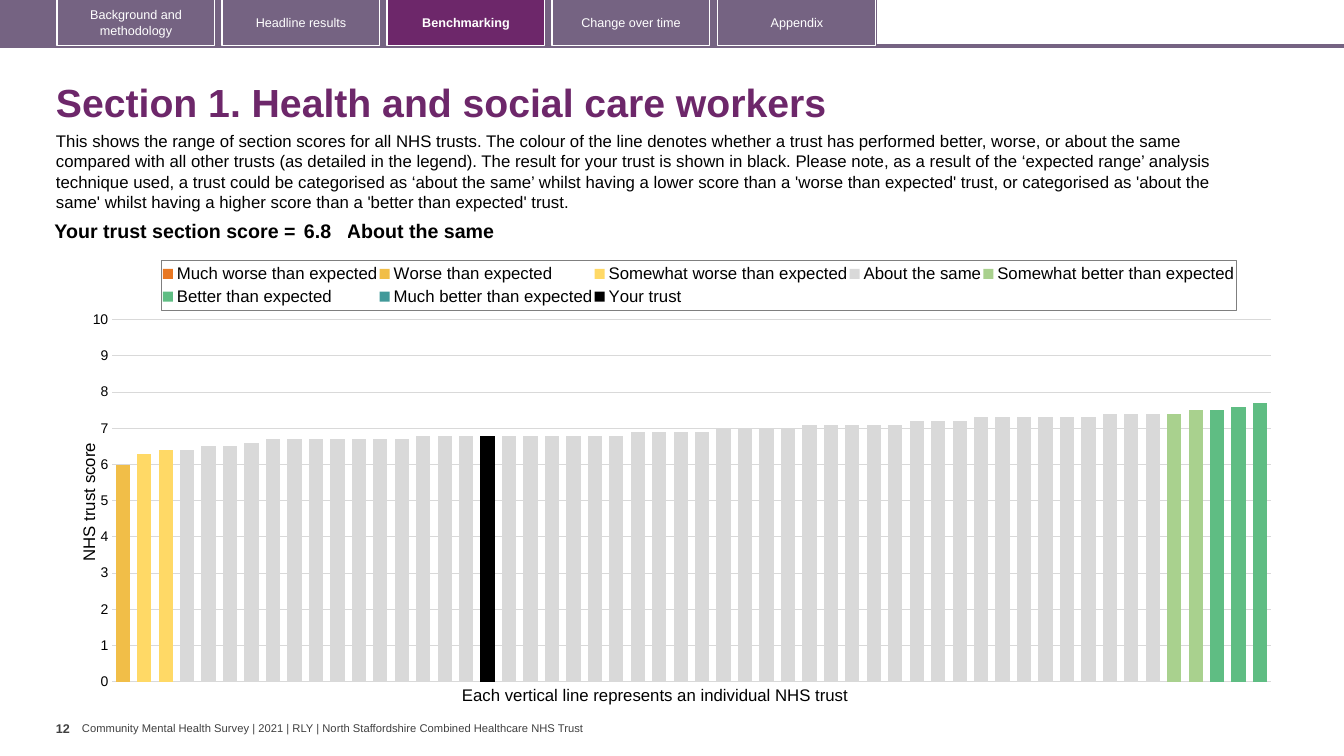
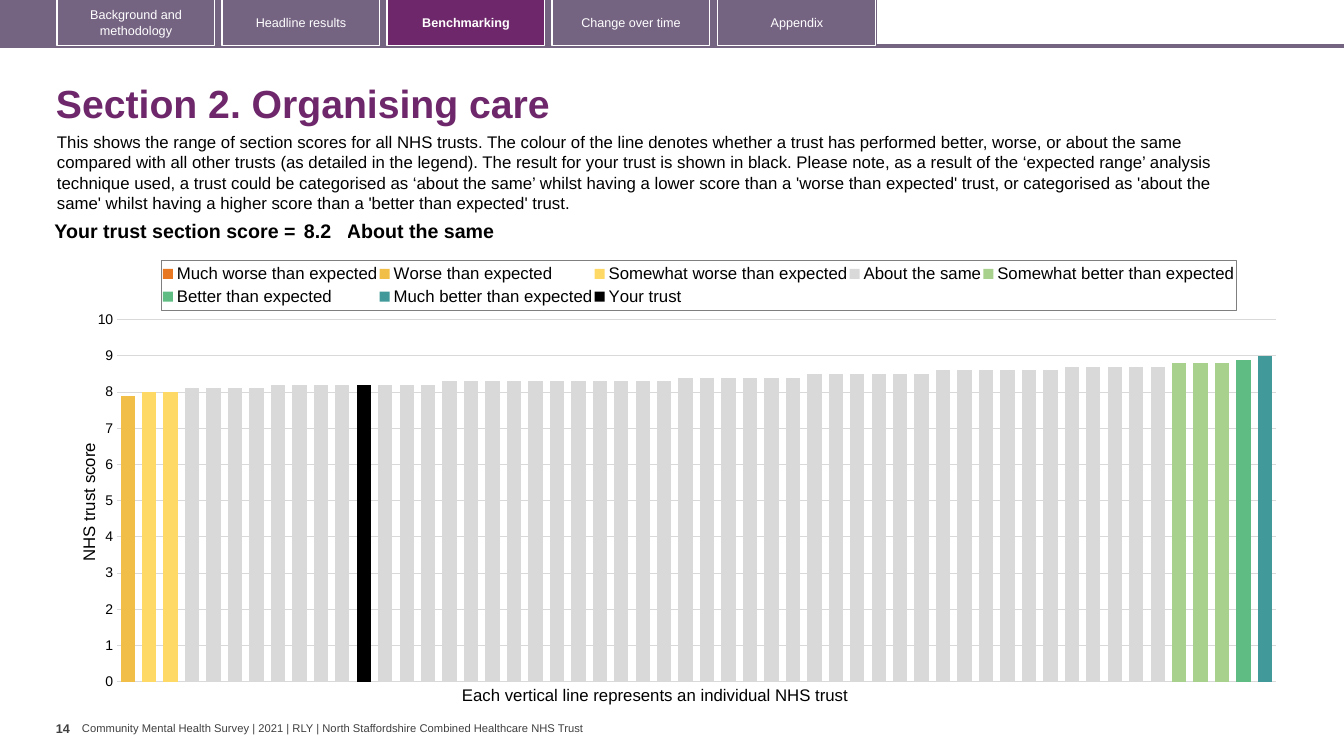
from copy import deepcopy

from lxml import etree
from pptx import Presentation
from pptx.chart.data import CategoryChartData
from pptx.dml.color import RGBColor
from pptx.enum.chart import (XL_CHART_TYPE, XL_LEGEND_POSITION,
                             XL_TICK_LABEL_POSITION, XL_TICK_MARK)
from pptx.enum.shapes import MSO_SHAPE
from pptx.enum.text import MSO_ANCHOR, PP_ALIGN
from pptx.oxml import parse_xml
from pptx.oxml.ns import nsdecls, qn
from pptx.util import Emu, Pt

RECT = MSO_SHAPE.RECTANGLE
COLUMN = XL_CHART_TYPE.COLUMN_CLUSTERED
TOP = XL_LEGEND_POSITION.TOP
NO_LABEL = XL_TICK_LABEL_POSITION.NONE
BESIDE = XL_TICK_LABEL_POSITION.NEXT_TO_AXIS
NO_TICK = XL_TICK_MARK.NONE
MIDDLE = MSO_ANCHOR.MIDDLE
LEFT, CENTER, RIGHT = PP_ALIGN.LEFT, PP_ALIGN.CENTER, PP_ALIGN.RIGHT

FONT = "Arial"
PLUM = RGBColor(0x6D, 0x27, 0x6A)
MAUVE = RGBColor(0x75, 0x63, 0x82)
WHITE = RGBColor(0xFF, 0xFF, 0xFF)
BLACK = RGBColor(0, 0, 0)
SLATE = RGBColor(0x40, 0x40, 0x40)
SILVER = RGBColor(0xD9, 0xD9, 0xD9)

WIDTH, HEIGHT = 1344, 756
TABS = ["Background and methodology", "Headline results", "Benchmarking",
        "Change over time", "Appendix"]
ACTIVE = "Benchmarking"
TAB_FIRST, TAB_LAST = 57, 718
FOOTER = ("Community Mental Health Survey | 2021 | RLY | "
          "North Staffordshire Combined Healthcare NHS Trust")
INTRO = (
    "This shows the range of section scores for all NHS trusts. The colour of the "
    "line denotes whether a trust has performed better, worse, or about the same "
    "compared with all other trusts (as detailed in the legend). The result for your "
    "trust is shown in black. Please note, as a result of the ‘expected range’ "
    "analysis technique used, a trust could be categorised as ‘about the same’ whilst "
    "having a lower score than a 'worse than expected' trust, or categorised as "
    "'about the same' whilst having a higher score than a 'better than expected' "
    "trust.")
CAPTION = "Each vertical line represents an individual NHS trust"
AXIS = "NHS trust score"
BANDS = [
    ("Much worse than expected", RGBColor(0xE8, 0x77, 0x22)),
    ("Worse than expected", RGBColor(0xF1, 0xBE, 0x48)),
    ("Somewhat worse than expected", RGBColor(0xFF, 0xD9, 0x66)),
    ("About the same", SILVER),
    ("Somewhat better than expected", RGBColor(0xA9, 0xD1, 0x8E)),
    ("Better than expected", RGBColor(0x5F, 0xBD, 0x83)),
    ("Much better than expected", RGBColor(0x41, 0x99, 0x99)),
]
OWN = ("Your trust", BLACK)

# counts: trusts in each band; rank: place of the own trust; nudge: px shift of text
SECTIONS = [
    dict(title="Section 1. Health and social care workers", page="12",
         result="About the same", rank=18, counts=[0, 1, 2, 46, 2, 3, 0],
         nudge=0, plot_x=0.036,
         scores=[6, 6.3, 6.4, 6.4, 6.5, 6.5, 6.6, 6.7, 6.7, 6.7, 6.7, 6.7, 6.7, 6.7,
                 6.8, 6.8, 6.8, 6.8, 6.8, 6.8, 6.8, 6.8, 6.8, 6.8, 6.9, 6.9, 6.9, 6.9,
                 7, 7, 7, 7, 7.1, 7.1, 7.1, 7.1, 7.1, 7.2, 7.2, 7.2, 7.3, 7.3, 7.3,
                 7.3, 7.3, 7.3, 7.4, 7.4, 7.4, 7.4, 7.5, 7.5, 7.6, 7.7]),
    dict(title="Section 2. Organising care", page="14",
         result="About the same", rank=12, counts=[0, 1, 2, 46, 3, 1, 1],
         nudge=1, plot_x=0.04,
         scores=[7.9, 8, 8, 8.1, 8.1, 8.1, 8.1, 8.2, 8.2, 8.2, 8.2, 8.2, 8.2, 8.2, 8.2,
                 8.3, 8.3, 8.3, 8.3, 8.3, 8.3, 8.3, 8.3, 8.3, 8.3, 8.3, 8.4, 8.4, 8.4,
                 8.4, 8.4, 8.4, 8.5, 8.5, 8.5, 8.5, 8.5, 8.5, 8.6, 8.6, 8.6, 8.6, 8.6,
                 8.6, 8.7, 8.7, 8.7, 8.7, 8.7, 8.8, 8.8, 8.8, 8.9, 9]),
]


def px(n):
    return Emu(round(n * 914400 / 100.8))


def box(*lengths):
    return [px(n) for n in lengths]


def style(font, size, color=BLACK, bold=False):
    font.name, font.size, font.bold = FONT, Pt(size), bold
    font.color.rgb = color


def write(frame, text, size, color=BLACK, bold=False, align=LEFT):
    para = frame.paragraphs[0]
    para.alignment = align
    run = para.add_run()
    run.text = text
    style(run.font, size, color, bold)


def label(slide, area, text, size, color=BLACK, bold=False, wrap=True, inset=(10, 5)):
    frame = slide.shapes.add_textbox(*box(*area)).text_frame
    frame.word_wrap = wrap
    frame.margin_left = frame.margin_right = px(inset[0])
    frame.margin_top = frame.margin_bottom = px(inset[1])
    write(frame, text, size, color, bold)
    return frame


def bar(slide, area, fill=None, line=None):
    shape = slide.shapes.add_shape(RECT, *box(*area))
    shape.shadow.inherit = False
    if fill is None:
        shape.fill.background()
    else:
        shape.fill.solid()
        shape.fill.fore_color.rgb = fill
    if line is None:
        shape.line.fill.background()
    else:
        shape.line.color.rgb = line
        shape.line.width = Pt(0.75)
    return shape


def add_frame(slide, page):
    """Footer, page number and navigation tabs."""
    foot = label(slide, (82, 722, 509, 13), FOOTER, 8, SLATE, wrap=False, inset=(0, 0))
    foot.vertical_anchor = MIDDLE
    bar(slide, (-3, 44, WIDTH + 3, 4), MAUVE)
    bar(slide, (-3, 0, 880, 47), MAUVE)
    for i, name in enumerate(TABS):
        left = TAB_FIRST + i * (TAB_LAST - TAB_FIRST) // (len(TABS) - 1)
        on = name == ACTIVE
        tab = bar(slide, (left, -1, 158, 47), PLUM if on else None, WHITE)
        tab.text_frame.vertical_anchor = MIDDLE
        write(tab.text_frame, name, 9, WHITE, on, CENTER)
    label(slide, (56, 716, 25, 40), page, 9, SLATE, True, False, (0, 5))


def add_score(slide, score, result):
    table = slide.shapes.add_table(1, 3, *box(35, 217, 1178, 22)).table
    table.first_row = table.horz_banding = False
    cells = [(265, "Your trust section score =", RIGHT, 4),
             (47, str(score), LEFT, 4), (866, result, LEFT, 0)]
    for i, (width, text, align, side) in enumerate(cells):
        table.columns[i].width = px(width)
        cell = table.cell(0, i)
        cell.fill.background()
        cell.margin_left = cell.margin_right = px(side)
        cell.margin_top = cell.margin_bottom = px(4)
        write(cell.text_frame, text, 14, bold=True, align=align)


def find(chart, tag):
    return chart.element.find(".//" + qn("c:" + tag))


def place(part, index, inner=False, **spots):
    """Give a chart part a fixed place, in fractions of the chart."""
    old = part.find(qn("c:layout"))
    if old is not None:
        part.remove(old)
    layout = parse_xml(f"<c:layout {nsdecls('c')}><c:manualLayout/></c:layout>")
    pairs = [("layoutTarget", "inner")] if inner else []
    pairs += [("xMode", "edge"), ("yMode", "edge"), *spots.items()]
    for tag, val in pairs:
        etree.SubElement(layout[0], qn("c:" + tag)).set("val", str(val))
    part.insert(index, layout)


def split_last(chart):
    """Move the last series to a second pair of axes."""
    plot, cat, val = [find(chart, tag) for tag in ("barChart", "catAx", "valAx")]
    plot2, cat2, val2 = [deepcopy(part) for part in (plot, cat, val)]
    for part in (plot2, cat2, val2):
        for tag in ("c:axId", "c:crossAx"):
            for node in part.findall(qn(tag)):
                node.set("val", str(int(node.get("val")) + 7))
    val2.find(qn("c:crosses")).set("val", "max")
    plot.remove(plot.findall(qn("c:ser"))[-1])
    for ser in plot2.findall(qn("c:ser"))[:-1]:
        plot2.remove(ser)
    plot.addnext(plot2)
    val.addnext(val2)
    val.addnext(cat2)


def add_bars(slide, scores, counts, rank, plot_x):
    data = CategoryChartData()
    data.categories = [str(n + 1) for n in range(len(scores))]
    start = 0
    for (name, _), count in zip(BANDS, counts):
        end = start + count
        data.add_series(name, [v if start <= i < end else None
                               for i, v in enumerate(scores)])
        start = end
    data.add_series(OWN[0], [v if i == rank - 1 else None
                             for i, v in enumerate(scores)])
    chart = slide.shapes.add_chart(COLUMN, *box(68, 249, 1225, 448), data).chart
    chart.has_title = False
    style(chart.font, 10)

    plot = chart.plots[0]
    plot.vary_by_categories = False
    plot.gap_width, plot.overlap = 50, 100
    for series, (_, color) in zip(plot.series, BANDS + [OWN]):
        series.invert_if_negative = False
        series.format.fill.solid()
        series.format.fill.fore_color.rgb = color

    chart.category_axis.visible = False
    axis = chart.value_axis
    axis.minimum_scale, axis.maximum_scale, axis.major_unit = 0, 10, 1
    axis.major_tick_mark = axis.minor_tick_mark = NO_TICK
    axis.format.line.fill.background()
    axis.has_major_gridlines = False
    axis.tick_label_position = NO_LABEL
    split_last(chart)

    axis.tick_label_position = BESIDE
    axis.tick_labels.number_format = "0"
    axis.tick_labels.number_format_is_linked = False
    style(axis.tick_labels.font, 10)
    axis.has_major_gridlines = True
    grid = axis.major_gridlines.format.line
    grid.color.rgb, grid.width = SILVER, Pt(0.75)
    write(axis.axis_title.text_frame, AXIS, 12)
    place(find(chart, "valAx").find(qn("c:title")), 1, x=0.006, y=0.426)

    chart.has_legend = True
    legend = chart.legend
    legend.position = TOP
    legend.include_in_layout = False
    style(legend.font, 12)
    node = find(chart, "legend")
    place(node, 1, x=0.076, y=0.025, w=0.878, h=0.112)
    node.find(qn("c:txPr")).addprevious(parse_xml(
        f"<c:spPr {nsdecls('c', 'a')}><a:noFill/><a:ln w='9525'><a:solidFill>"
        "<a:srgbClr val='7F7F7F'/></a:solidFill></a:ln></c:spPr>"))
    place(find(chart, "plotArea"), 0, True, x=plot_x, y=0.158, w=0.946, h=0.808)


def add_section(slide, title, page, result, rank, counts, nudge, plot_x, scores):
    add_frame(slide, page)
    head = label(slide, (46, 68 + nudge, 1259, 73), title, 28, PLUM, True)
    head.vertical_anchor = MIDDLE
    head.paragraphs[0].line_spacing = 0.9
    label(slide, (46 + nudge, 126 + nudge, 1223, 92), INTRO, 12)
    label(slide, (452, 680, 414, 30), CAPTION, 12, wrap=False)
    add_bars(slide, scores, counts, rank, plot_x)
    add_score(slide, scores[rank - 1], result)


def main():
    deck = Presentation()
    deck.slide_width, deck.slide_height = box(WIDTH, HEIGHT)
    for section in SECTIONS:
        add_section(deck.slides.add_slide(deck.slide_layouts[6]), **section)
    deck.save("out.pptx")


if __name__ == "__main__":
    main()
